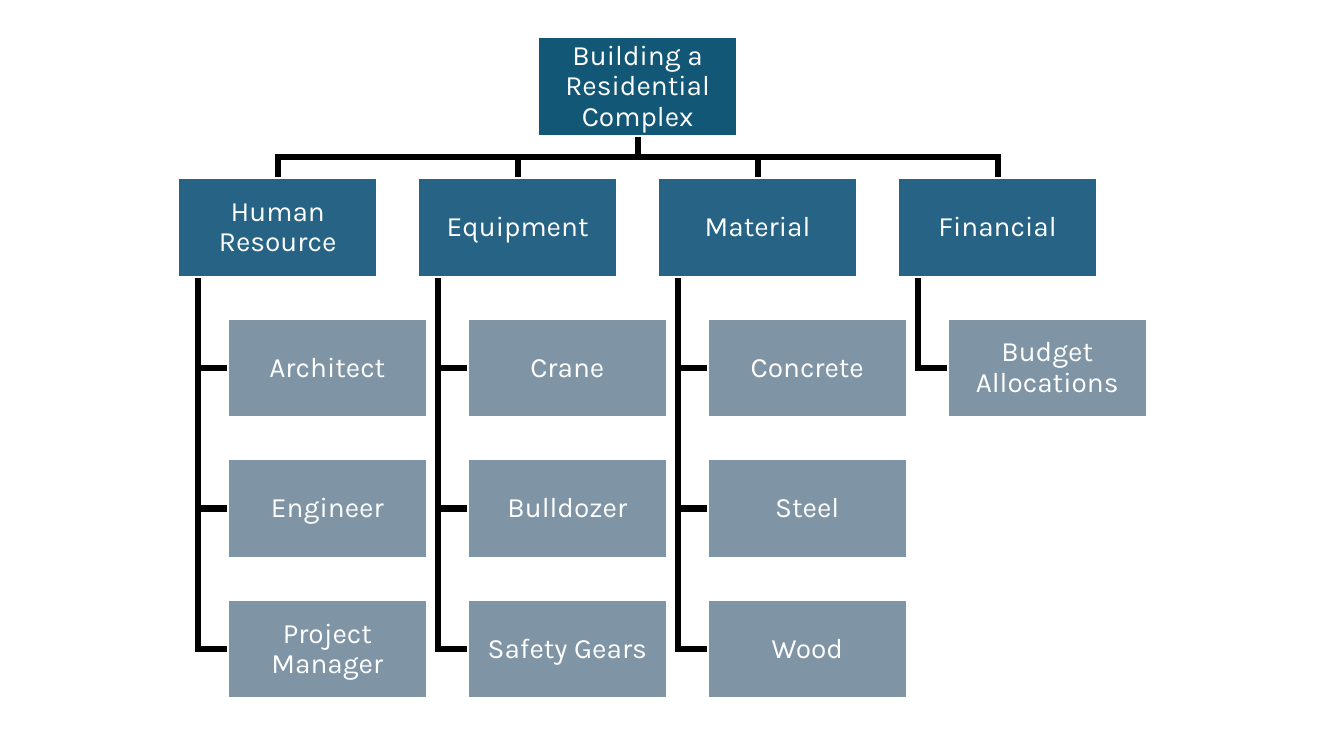
from dataclasses import dataclass

from lxml import etree
from pptx import Presentation
from pptx.dml.color import RGBColor
from pptx.enum.shapes import MSO_SHAPE
from pptx.enum.text import MSO_ANCHOR, PP_ALIGN
from pptx.oxml.ns import qn
from pptx.util import Inches, Pt

RECTANGLE = MSO_SHAPE.RECTANGLE
MIDDLE = MSO_ANCHOR.MIDDLE
CENTER = PP_ALIGN.CENTER


@dataclass(frozen=True)
class Theme:
    project: str = "135776"
    category: str = "276384"
    resource: str = "7F94A5"
    outline: str = "FFFFFF"
    text: str = "FFFFFF"
    link: str = "000000"
    font: str = "Karla"
    text_size: float = 20
    outline_width: float = 1.5
    link_width: float = 4.5


THEME = Theme()

SLIDE_W, SLIDE_H = 13.33, 7.5
BOX_W, BOX_H = 1.97, 0.98
LEFT, COL_STEP = 1.77, 2.38
TOP, LAST_TOP, ROWS = 0.37, 5.95, 5
ROW_STEP = (LAST_TOP - TOP) / (ROWS - 1)
INDENT = BOX_W / 4
TRUNK = BOX_W / 10
INSET = 0.01

PROJECT = "Building a Residential Complex"
BREAKDOWN = {
    "Human Resource": ["Architect", "Engineer", "Project Manager"],
    "Equipment": ["Crane", "Bulldozer", "Safety Gears"],
    "Material": ["Concrete", "Steel", "Wood"],
    "Financial": ["Budget Allocations"],
}


def col_x(col):
    return LEFT + col * COL_STEP


def row_y(row):
    return TOP + row * ROW_STEP


def set_attrs(target, values):
    for name, value in values.items():
        setattr(target, name, value)


def set_line(sp, color, width):
    sp.line.color.rgb = RGBColor.from_string(color)
    sp.line.width = Pt(width)


def add_box(slide, text, x, y, fill):
    sp = slide.shapes.add_shape(
        RECTANGLE, Inches(x), Inches(y), Inches(BOX_W), Inches(BOX_H))
    sp.shadow.inherit = False
    sp.fill.solid()
    sp.fill.fore_color.rgb = RGBColor.from_string(fill)
    set_line(sp, THEME.outline, THEME.outline_width)
    tf = sp.text_frame
    set_attrs(tf, {"word_wrap": True, "vertical_anchor": MIDDLE})
    for side in ("left", "top", "right", "bottom"):
        setattr(tf, f"margin_{side}", Inches(INSET))
    p = tf.paragraphs[0]
    set_attrs(p, {"alignment": CENTER, "line_spacing": 0.9})
    r = p.add_run()
    r.text = text
    set_attrs(r.font, {"name": THEME.font, "size": Pt(THEME.text_size)})
    r.font.color.rgb = RGBColor.from_string(THEME.text)


def add_link(slide, points):
    """Draw an open, square-cornered line through the points."""
    start, *rest = [(Inches(x), Inches(y)) for x, y in points]
    builder = slide.shapes.build_freeform(*start)
    builder.add_line_segments(rest, close=False)
    sp = builder.convert_to_shape()
    sp.shadow.inherit = False
    sp.fill.background()
    set_line(sp, THEME.link, THEME.link_width)
    ln = sp.element.spPr.find(qn("a:ln"))
    etree.SubElement(ln, qn("a:miter"), lim="800000")


def link_category(slide, project_x, col):
    """Join the project box to the top of a category box."""
    start_x, end_x = project_x + BOX_W / 2, col_x(col) + BOX_W / 2
    start_y, end_y = row_y(0) + BOX_H, row_y(1)
    bend_y = (start_y + end_y) / 2
    add_link(slide, [(start_x, start_y), (start_x, bend_y),
                     (end_x, bend_y), (end_x, end_y)])


def link_resource(slide, col, row):
    """Join a category box to the left side of a resource box."""
    x, y = col_x(col) + TRUNK, row_y(row) + BOX_H / 2
    add_link(slide, [(x, row_y(1) + BOX_H), (x, y), (col_x(col) + INDENT, y)])


def main():
    prs = Presentation()
    set_attrs(prs, {"slide_width": Inches(SLIDE_W),
                    "slide_height": Inches(SLIDE_H)})
    slide = prs.slides.add_slide(prs.slide_layouts[6])
    project_x = col_x((len(BREAKDOWN) - 1) / 2)

    for col, resources in enumerate(BREAKDOWN.values()):
        link_category(slide, project_x, col)
        for row in range(2, 2 + len(resources)):
            link_resource(slide, col, row)

    add_box(slide, PROJECT, project_x, row_y(0), THEME.project)
    for col, (category, resources) in enumerate(BREAKDOWN.items()):
        add_box(slide, category, col_x(col), row_y(1), THEME.category)
        for row, resource in enumerate(resources, start=2):
            add_box(slide, resource, col_x(col) + INDENT, row_y(row),
                    THEME.resource)

    prs.save("out.pptx")


if __name__ == "__main__":
    main()
